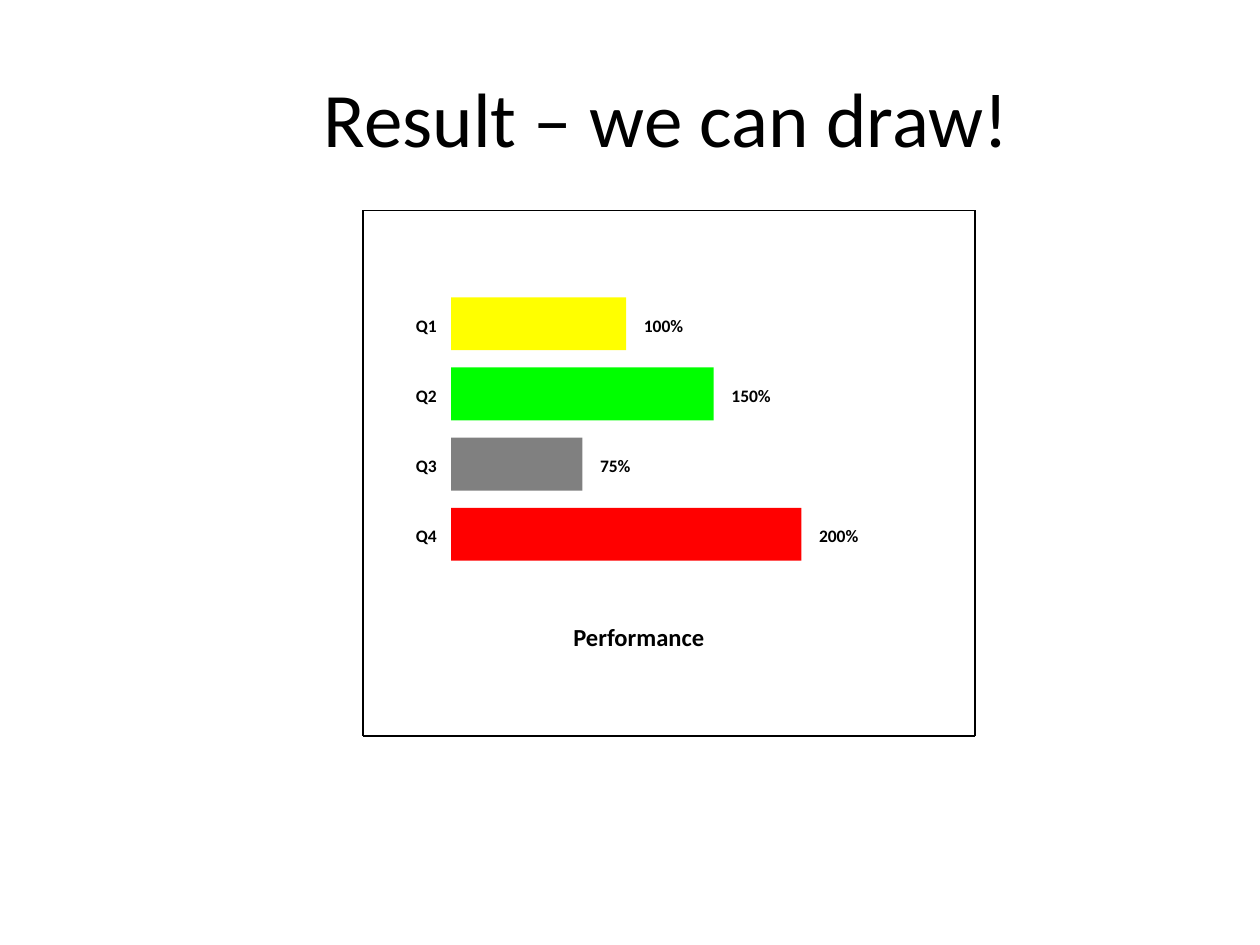
"""Build a slide with a hand-drawn bar chart of quarterly performance."""
import pptx
import pptx.dml.color
import pptx.enum.shapes
import pptx.enum.text
import pptx.util
from lxml import etree

Inches = pptx.util.Inches
ALIGN = pptx.enum.text.PP_ALIGN
TITLE = "Result – we can draw!"
LABEL = "Performance"
BARS = [
    ("Q1", 100, "FFFF00"),
    ("Q2", 150, "00FF00"),
    ("Q3", 75, "808080"),
    ("Q4", 200, "FF0000"),
]
LEFT, TOP, HIGH = 3.58, 2.36, 0.42
STEP = 1.67 / 3
SCALE = 1.39 / 100
FRAME = (2.88, 1.67, 7.74, 5.84)
BASE = {"name": "Calibri", "bold": True}


def color(code):
    return pptx.dml.color.RGBColor.from_string(code)


def add_text(slide, text, box, size, align=ALIGN.LEFT, inset=0, wrap=False, **style):
    frame = slide.shapes.add_textbox(*map(Inches, box)).text_frame
    margin = Inches(inset)
    form = {
        "word_wrap": wrap,
        "vertical_anchor": pptx.enum.text.MSO_ANCHOR.MIDDLE,
        "margin_left": margin,
        "margin_right": margin,
        "margin_top": margin / 2,
        "margin_bottom": margin / 2,
    }
    for key, value in form.items():
        setattr(frame, key, int(value) if key.startswith("margin") else value)
    para = frame.paragraphs[0]
    para.alignment = align
    run = para.add_run()
    run.text = text
    for key, value in {**BASE, "size": pptx.util.Pt(size), **style}.items():
        setattr(run.font, key, value)
    run.font.color.rgb = color("000000")


def add_bar(slide, box, code):
    kind = pptx.enum.shapes.MSO_SHAPE.RECTANGLE
    bar = slide.shapes.add_shape(kind, *map(Inches, box))
    bar.shadow.inherit = False
    bar.fill.solid()
    bar.fill.fore_color.rgb = color(code)
    bar.line.fill.background()


def add_line(slide, start, end):
    kind = pptx.enum.shapes.MSO_CONNECTOR.STRAIGHT
    line = slide.shapes.add_connector(kind, *map(Inches, start + end))
    line.line.color.rgb = color("000000")
    line.line.width = pptx.util.Pt(1)
    props = line._element.spPr
    etree.SubElement(props, pptx.oxml.ns.qn("a:effectLst"))


def main():
    deck = pptx.Presentation()
    deck.slide_width, deck.slide_height = Inches(10), Inches(7.5)
    slide = deck.slides.add_slide(deck.slide_layouts[6])
    add_text(slide, TITLE, (1.08, 0.3, 8.42, 1.25), 44,
             ALIGN.CENTER, 0.1, True, bold=False)

    for row, (name, value, code) in enumerate(BARS):
        top = TOP + row * STEP
        width = value * SCALE
        note = f"{value}%"
        add_text(slide, name, (LEFT - 0.28, top + 0.09, 0.19, 0.26), 10)
        add_text(slide, note, (LEFT + width + 0.14, top + 0.09,
                               0.095 * len(note), 0.26), 10)
        add_bar(slide, (LEFT, top, width, HIGH), code)

    left, top, right, base = FRAME
    ends = [(left, top), (right, top), (right, base), (left, base)]
    for start, end in zip(ends, ends[1:] + ends[:1]):
        add_line(slide, start, end)
    add_text(slide, LABEL, (4.55, 4.87, 1.25, 0.36), 14)
    deck.save("out.pptx")


if __name__ == "__main__":
    main()
